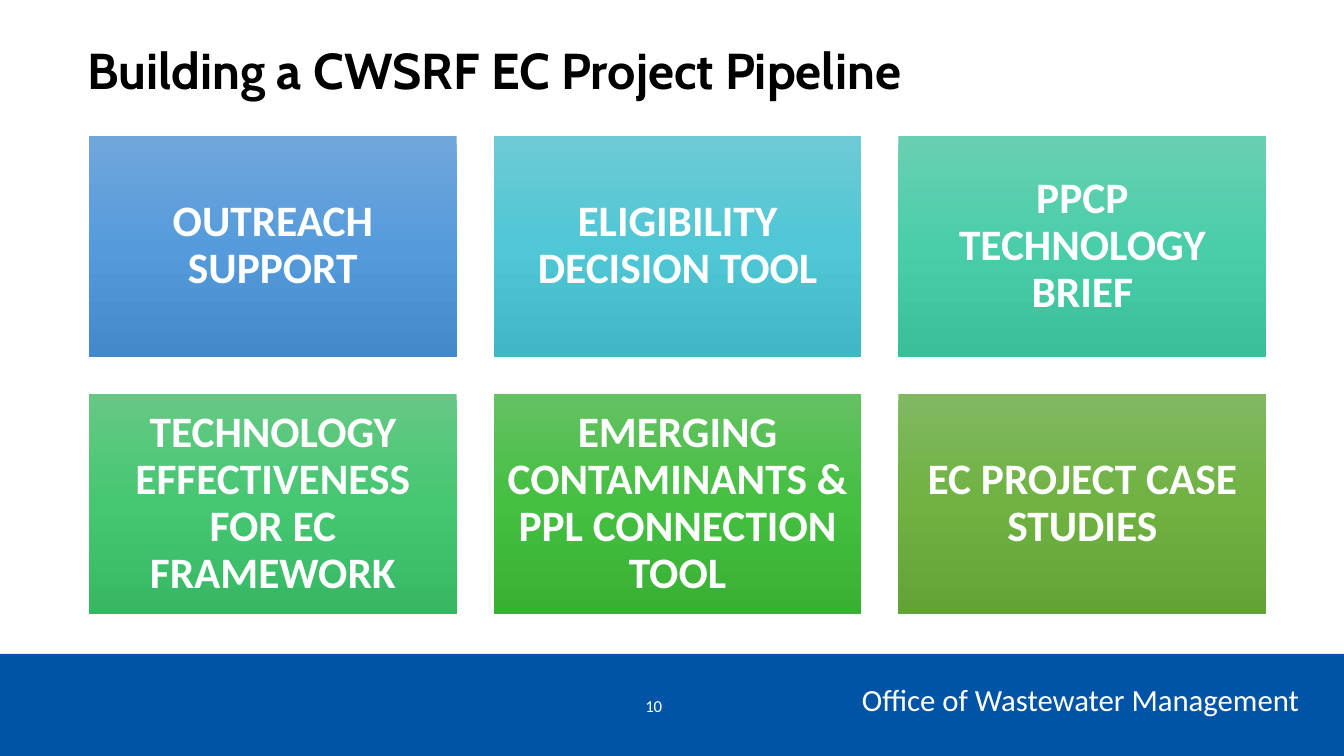
from copy import deepcopy
from typing import NamedTuple

from pptx import Presentation
from pptx.dml.color import RGBColor
from pptx.enum.shapes import MSO_SHAPE
from pptx.enum.text import MSO_ANCHOR, PP_ALIGN
from pptx.oxml.ns import qn
from pptx.shapes.autoshape import Shape
from pptx.slide import Slide
from pptx.util import Cm, Pt

WHITE = RGBColor(0xFF, 0xFF, 0xFF)
BLACK = RGBColor(0x00, 0x00, 0x00)
FOOTER_BLUE = RGBColor(0x00, 0x54, 0xA6)

SLIDE_WIDTH, SLIDE_HEIGHT = 33.87, 19.05
FOOTER_TOP = 16.48

# Grid of tiles, in centimetres
COLUMNS = 3
GRID_LEFT, GRID_TOP = 2.24, 3.43
TILE_WIDTH, TILE_HEIGHT = 9.27, 5.56
GAP = 0.93
TILE_INSET = 0.33


class Tile(NamedTuple):
    label: str
    top: RGBColor
    middle: RGBColor
    bottom: RGBColor


TILES = [
    Tile("OUTREACH SUPPORT",
         RGBColor(0x71, 0xA6, 0xDB), RGBColor(0x55, 0x9B, 0xDB), RGBColor(0x44, 0x8A, 0xCA)),
    Tile("ELIGIBILITY DECISION TOOL",
         RGBColor(0x6D, 0xCA, 0xD5), RGBColor(0x4F, 0xC7, 0xD5), RGBColor(0x3F, 0xB7, 0xC4)),
    Tile("PPCP TECHNOLOGY BRIEF",
         RGBColor(0x69, 0xCF, 0xB1), RGBColor(0x4A, 0xCE, 0xAA), RGBColor(0x3B, 0xBE, 0x9A)),
    Tile("TECHNOLOGY EFFECTIVENESS FOR EC FRAMEWORK",
         RGBColor(0x66, 0xC8, 0x85), RGBColor(0x45, 0xC7, 0x72), RGBColor(0x37, 0xB7, 0x64)),
    Tile("EMERGING CONTAMINANTS & PPL CONNECTION TOOL",
         RGBColor(0x64, 0xC1, 0x62), RGBColor(0x44, 0xBF, 0x41), RGBColor(0x37, 0xB0, 0x34)),
    Tile("EC PROJECT CASE STUDIES",
         RGBColor(0x81, 0xB8, 0x61), RGBColor(0x6F, 0xB2, 0x42), RGBColor(0x62, 0xA3, 0x36)),
]


def write_text(shape: Shape, text: str, *, size: float, font: str = "Calibri",
               color: RGBColor = WHITE, bold: bool = False,
               align: PP_ALIGN = PP_ALIGN.LEFT, anchor: MSO_ANCHOR = MSO_ANCHOR.MIDDLE,
               line_spacing: float = 1.0) -> None:
    frame = shape.text_frame
    frame.word_wrap = True
    frame.vertical_anchor = anchor
    paragraph = frame.paragraphs[0]
    paragraph.text = text
    paragraph.alignment = align
    paragraph.line_spacing = line_spacing
    paragraph.font.name = font
    paragraph.font.size = Pt(size)
    paragraph.font.bold = bold
    paragraph.font.color.rgb = color


def add_box(slide: Slide, left: float, top: float, width: float, height: float) -> Shape:
    return slide.shapes.add_textbox(Cm(left), Cm(top), Cm(width), Cm(height))


def add_rectangle(slide: Slide, left: float, top: float, width: float, height: float) -> Shape:
    rectangle = slide.shapes.add_shape(
        MSO_SHAPE.RECTANGLE, Cm(left), Cm(top), Cm(width), Cm(height))
    rectangle.shadow.inherit = False
    rectangle.line.fill.background()
    return rectangle


def fill_gradient(shape: Shape, colors: tuple[RGBColor, ...]) -> None:
    """Fill from top to bottom with evenly spaced colours."""
    fill = shape.fill
    fill.gradient()
    fill.gradient_angle = 270
    stop_list = shape._element.spPr.find(qn("a:gradFill")).find(qn("a:gsLst"))
    while len(stop_list) < len(colors):
        stop_list.append(deepcopy(stop_list[0]))
    for index, (stop, color) in enumerate(zip(fill.gradient_stops, colors)):
        stop.position = index / (len(colors) - 1)
        stop.color.rgb = color


def add_tile(slide: Slide, index: int, tile: Tile) -> None:
    row, column = divmod(index, COLUMNS)
    card = add_rectangle(slide, GRID_LEFT + column * (TILE_WIDTH + GAP),
                         GRID_TOP + row * (TILE_HEIGHT + GAP), TILE_WIDTH, TILE_HEIGHT)
    fill_gradient(card, (tile.top, tile.middle, tile.bottom))
    frame = card.text_frame
    frame.margin_left = frame.margin_right = Cm(TILE_INSET)
    frame.margin_top = frame.margin_bottom = Cm(TILE_INSET)
    write_text(card, tile.label, size=31, bold=True, align=PP_ALIGN.CENTER, line_spacing=0.9)


def main() -> None:
    presentation = Presentation()
    presentation.slide_width = Cm(SLIDE_WIDTH)
    presentation.slide_height = Cm(SLIDE_HEIGHT)
    slide = presentation.slides.add_slide(presentation.slide_layouts[6])

    # Footer band with page number and office name
    footer = add_rectangle(slide, 0, FOOTER_TOP, SLIDE_WIDTH, SLIDE_HEIGHT - FOOTER_TOP)
    footer.fill.solid()
    footer.fill.fore_color.rgb = FOOTER_BLUE
    page_number = add_box(slide, 15.21, 17.27, 1.73, 1.02)
    write_text(page_number, "10", size=12, align=PP_ALIGN.RIGHT)
    office = add_box(slide, 18.59, 17.04, 14.4, 1.19)
    write_text(office, "Office of Wastewater Management", size=22,
               align=PP_ALIGN.RIGHT, anchor=MSO_ANCHOR.TOP)

    # Title
    title = add_box(slide, 1.96, 0.41, 29.97, 2.87)
    write_text(title, "Building a CWSRF EC Project Pipeline", size=36, font="Cabin",
               color=BLACK, bold=True, line_spacing=0.9)

    # Pipeline tiles
    for index, tile in enumerate(TILES):
        add_tile(slide, index, tile)

    presentation.save("out.pptx")


if __name__ == "__main__":
    main()
